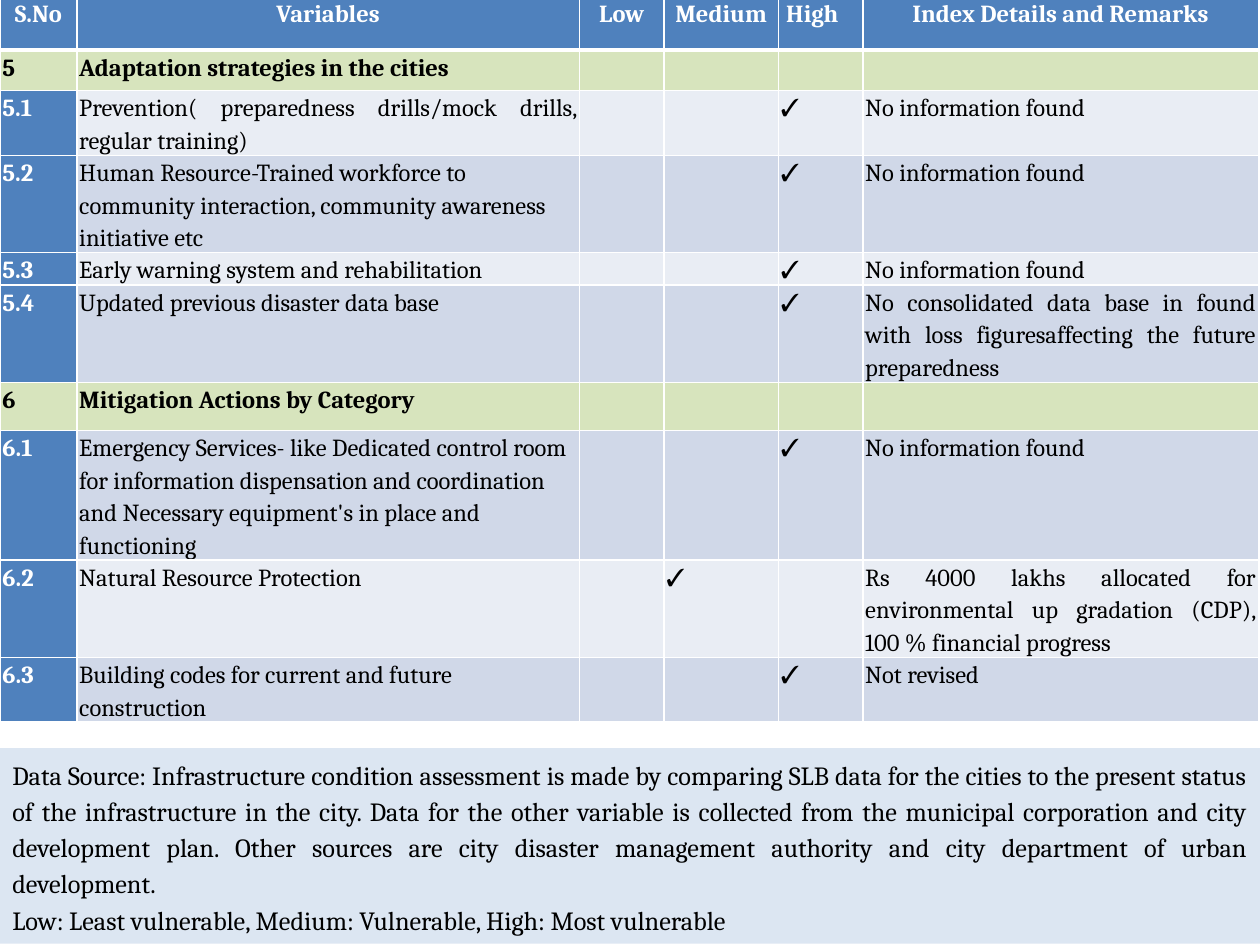
from lxml import etree
from pptx import Presentation
from pptx.dml.color import RGBColor
from pptx.enum.shapes import MSO_SHAPE
from pptx.enum.text import MSO_ANCHOR, PP_ALIGN
from pptx.oxml.ns import qn
from pptx.util import Pt

RECT = MSO_SHAPE.RECTANGLE
TOP = MSO_ANCHOR.TOP
LEFT, CENTER, JUSTIFY = PP_ALIGN.LEFT, PP_ALIGN.CENTER, PP_ALIGN.JUSTIFY

THEME = {
    "font": "Cambria", "table_size": 14, "note_size": 15, "spacing": 1.15,
    "white": "FFFFFF", "black": "000000", "blue": "4F81BD", "green": "D7E4BD",
    "bands": ("E9EDF4", "D0D8E8"), "note": "DCE6F2",
}

HEADERS = ["S.No", "Variables", "Low", "Medium", "High", "Index Details and Remarks"]
COL_WIDTHS = [43.9, 287.3, 48.2, 65.5, 48.2, 226.1]
NONE_FOUND = "No information found"
ROWS = [
    (23.3, "5", "Adaptation strategies in the cities", "", ""),
    (36.8, "5.1", "Prevention( preparedness drills/mock drills, regular training)", "High", NONE_FOUND),
    (55.4, "5.2", "Human Resource-Trained workforce to community interaction, "
     "community awareness initiative etc", "High", NONE_FOUND),
    (18.6, "5.3", "Early warning system and rehabilitation", "High", NONE_FOUND),
    (55.4, "5.4", "Updated previous disaster data base", "High",
     "No consolidated data base in found with loss figuresaffecting the future preparedness"),
    (27.5, "6", "Mitigation Actions by Category", "", ""),
    (73.8, "6.1", "Emergency Services- like Dedicated control room for information dispensation "
     "and coordination and Necessary equipment's in place and functioning", "High", NONE_FOUND),
    (55.4, "6.2", "Natural Resource Protection", "Medium",
     "Rs 4000 lakhs allocated for environmental up gradation (CDP), 100 % financial progress"),
    (36.8, "6.3", "Building codes for current and future construction", "High", "Not revised"),
]
HEADER_HEIGHT = 30.7
NOTES = [
    "Data Source: Infrastructure condition assessment is made by comparing SLB data for the "
    "cities to the present status of the infrastructure in the city. Data for the other variable "
    "is collected from the municipal corporation and city development plan. Other sources are "
    "city disaster management authority and city department of urban development.",
    "Low: Least vulnerable, Medium: Vulnerable, High: Most vulnerable",
]


def write(p, text, size, color, bold, align):
    p.alignment = align
    p.line_spacing = THEME["spacing"]
    if not text:
        etree.SubElement(p._p, qn("a:endParaRPr"), sz=str(size * 100))
        return
    r = p.add_run()
    r.text = text
    r.font.name = THEME["font"]
    r.font.size = Pt(size)
    r.font.bold = bold
    r.font.color.rgb = RGBColor.from_string(color)


def style_cell(cell, fill, bottom):
    cell.margin_left = cell.margin_right = Pt(1.4)
    cell.margin_top = cell.margin_bottom = Pt(0)
    tcPr = cell._tc.get_or_add_tcPr()
    for tag, width in (("a:lnL", 1), ("a:lnR", 1), ("a:lnT", 1), ("a:lnB", bottom)):
        ln = etree.SubElement(tcPr, qn(tag), w=str(Pt(width)))
        solid = etree.SubElement(ln, qn("a:solidFill"))
        etree.SubElement(solid, qn("a:srgbClr"), val=THEME["white"])
    cell.fill.solid()
    cell.fill.fore_color.rgb = RGBColor.from_string(fill)


prs = Presentation()
prs.slide_width, prs.slide_height = Pt(720), Pt(540)
s = prs.slides.add_slide(prs.slide_layouts[6])

heights = [HEADER_HEIGHT] + [row[0] for row in ROWS]
table = s.shapes.add_table(len(heights), len(HEADERS), Pt(0), Pt(-2.2),
                           Pt(sum(COL_WIDTHS)), Pt(sum(heights))).table
for col, width in zip(table.columns, COL_WIDTHS):
    col.width = Pt(width)
for row, height in zip(table.rows, heights):
    row.height = Pt(height)

size = THEME["table_size"]
for j, header in enumerate(HEADERS):
    cell = table.cell(0, j)
    style_cell(cell, THEME["blue"], 3)
    write(cell.text_frame.paragraphs[0], header, size, THEME["white"], True, CENTER)
table.cell(0, HEADERS.index("High")).margin_right = Pt(11)

for i, (_, number, variable, level, remark) in enumerate(ROWS, 1):
    section = "." not in number
    band = THEME["green"] if section else THEME["bands"][i % 2]
    ticks = ["✓" if level == name else "" for name in HEADERS[2:5]]
    for j, text in enumerate([number, variable, *ticks, remark]):
        key = j == 0 and not section
        cell = table.cell(i, j)
        style_cell(cell, THEME["blue"] if key else band, 1)
        align = LEFT if j == 1 and number != "5.1" else JUSTIFY
        write(cell.text_frame.paragraphs[0], text, size,
              THEME["white"] if key else THEME["black"], section or key, align)

sp = s.shapes.add_shape(RECT, Pt(0), Pt(427.5), Pt(720), Pt(111.7))
sp.shadow.inherit = False
sp.fill.solid()
sp.fill.fore_color.rgb = RGBColor.from_string(THEME["note"])
sp.line.fill.background()
tf = sp.text_frame
tf.word_wrap = True
tf.vertical_anchor = TOP
for k, note in enumerate(NOTES):
    p = tf.add_paragraph() if k else tf.paragraphs[0]
    write(p, note, THEME["note_size"], THEME["black"], False, JUSTIFY)

prs.save("out.pptx")
